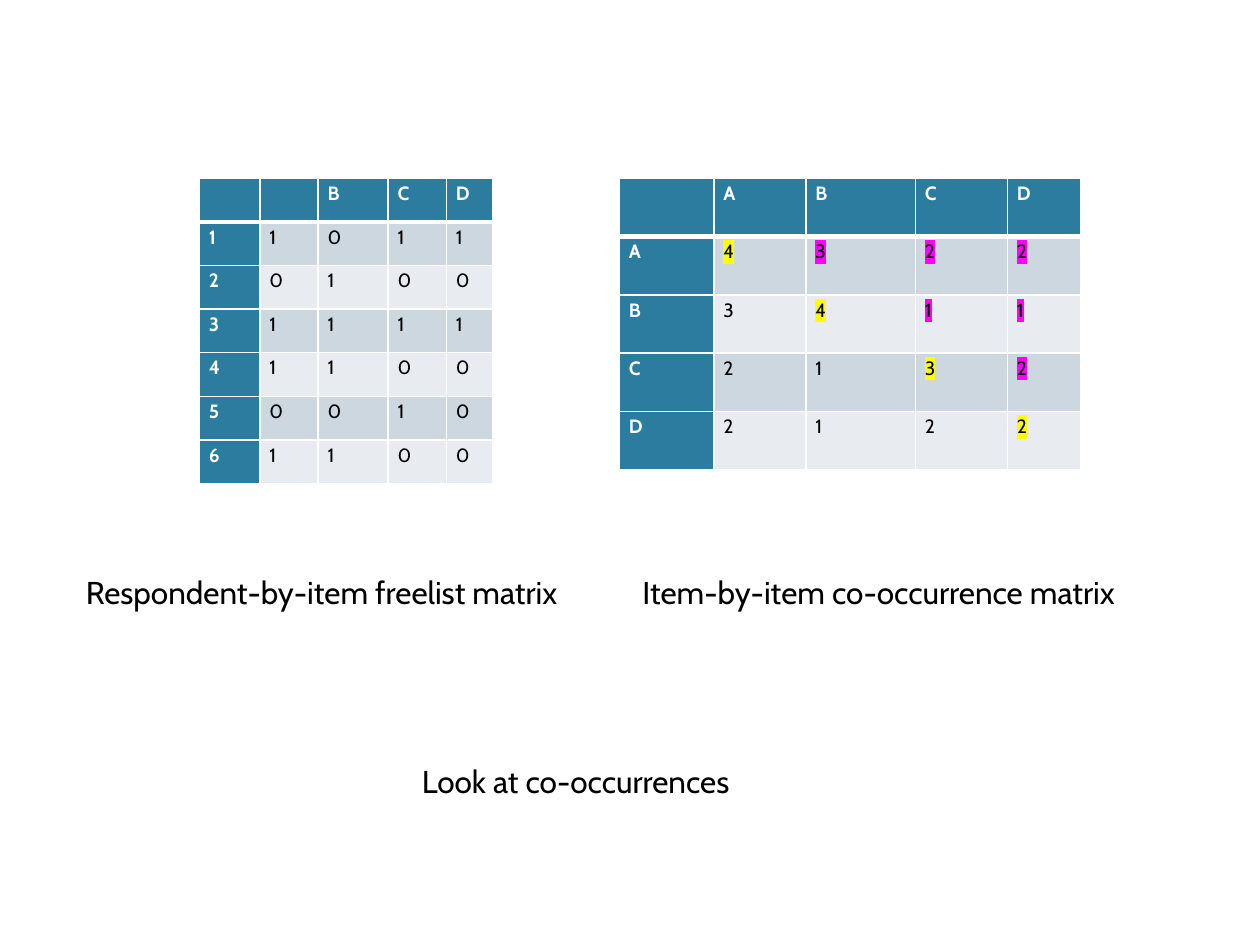
from pptx import Presentation
from pptx.dml.color import RGBColor as RGB
from pptx.enum.text import MSO_AUTO_SIZE as Auto
from pptx.util import Pt
from lxml.etree import SubElement as Sub, Element as Elem
from pptx.oxml.ns import qn

TEAL = RGB(0x2C, 0x7C, 0x9F)
BANDS = RGB(0xE8, 0xEC, 0xF0), RGB(0xCD, 0xD7, 0xDF)
WHITE = RGB(0xFF, 0xFF, 0xFF)
BLACK = RGB(0, 0, 0)
YELLOW = RGB(0xFF, 0xFF, 0)
PINK = RGB(0xFF, 0, 0xFF)

ITEMS = [
    ["", "", "B", "C", "D"],
    ["1", "1", "0", "1", "1"],
    ["2", "0", "1", "0", "0"],
    ["3", "1", "1", "1", "1"],
    ["4", "1", "1", "0", "0"],
    ["5", "0", "0", "1", "0"],
    ["6", "1", "1", "0", "0"],
]
PAIRS = [
    ["", "A", "B", "C", "D"],
    ["A", "4", "3", "2", "2"],
    ["B", "3", "4", "1", "1"],
    ["C", "2", "1", "3", "2"],
    ["D", "2", "1", "2", "2"],
]


def pair_mark(row, col):
    if row == 0 or col < row:
        return None
    return YELLOW if row == col else PINK


class Deck:
    font = "Cabin"
    inset = {"margin_left": 5.4, "margin_right": 5.4, "margin_top": 0, "margin_bottom": 0}

    def __init__(self, slide):
        self.slide = slide

    def text(self, para, words, size, color, bold=False):
        run = para.add_run()
        run.text = words
        look = {"name": self.font, "size": Pt(size), "bold": bold}
        for key, val in look.items():
            setattr(run.font, key, val)
        run.font.color.rgb = color
        return run

    def label(self, words, left, top, width):
        box = self.slide.shapes.add_textbox(Pt(left), Pt(top), Pt(width), Pt(29))
        frame = box.text_frame
        frame.word_wrap = False
        frame.auto_size = Auto.SHAPE_TO_FIT_TEXT
        self.text(frame.paragraphs[0], words, 18, BLACK)

    def mark(self, run, color):
        light = Elem(qn("a:highlight"))
        Sub(light, qn("a:srgbClr"), val=str(color))
        run._r.rPr.find(qn("a:solidFill")).addnext(light)

    def edges(self, cell, row):
        props = cell._tc.get_or_add_tcPr()
        wide = {"L": 1, "R": 1, "T": 3 if row == 1 else 1, "B": 3 if row == 0 else 1}
        for side, width in wide.items():
            line = Sub(props, qn(f"a:ln{side}"), w=str(Pt(width)))
            fill = Sub(line, qn("a:solidFill"))
            Sub(fill, qn("a:srgbClr"), val=str(WHITE))

    def cell(self, cell, words, row, col, mark):
        head = row == 0 or col == 0
        for key, val in self.inset.items():
            setattr(cell, key, Pt(val))
        self.edges(cell, row)
        cell.fill.solid()
        cell.fill.fore_color.rgb = TEAL if head else BANDS[row % 2]
        if not words:
            return
        para = cell.text_frame.paragraphs[0]
        para.line_spacing = 1.15
        run = self.text(para, words, 11, WHITE if head else BLACK, head)
        if mark:
            self.mark(run, mark)

    def table(self, data, left, top, widths, height, rule=None):
        rows, cols = len(data), len(widths)
        grid = self.slide.shapes.add_table(
            rows, cols, Pt(left), Pt(top), Pt(sum(widths)), Pt(height * rows)
        ).table
        for col, width in zip(grid.columns, widths):
            col.width = Pt(width)
        for row, line in enumerate(data):
            grid.rows[row].height = Pt(height)
            for col, words in enumerate(line):
                mark = rule(row, col) if rule else None
                self.cell(grid.cell(row, col), words, row, col, mark)


def main():
    show = Presentation()
    show.slide_width, show.slide_height = Pt(720), Pt(540)
    deck = Deck(show.slides.add_slide(show.slide_layouts[6]))
    deck.table(ITEMS, 114, 102, [34.5, 33.3, 40, 33.3, 26.7], 24.9)
    deck.label("Respondent-by-item freelist matrix", 42, 324, 291.6)
    deck.label("Item-by-item co-occurrence matrix", 360, 324, 293)
    deck.table(PAIRS, 354, 102, [54, 52.5, 62.7, 52.5, 41.8], 33.3, pair_mark)
    deck.label("Look at co-occurrences", 234, 432, 199.4)
    show.save("out.pptx")


if __name__ == "__main__":
    main()
